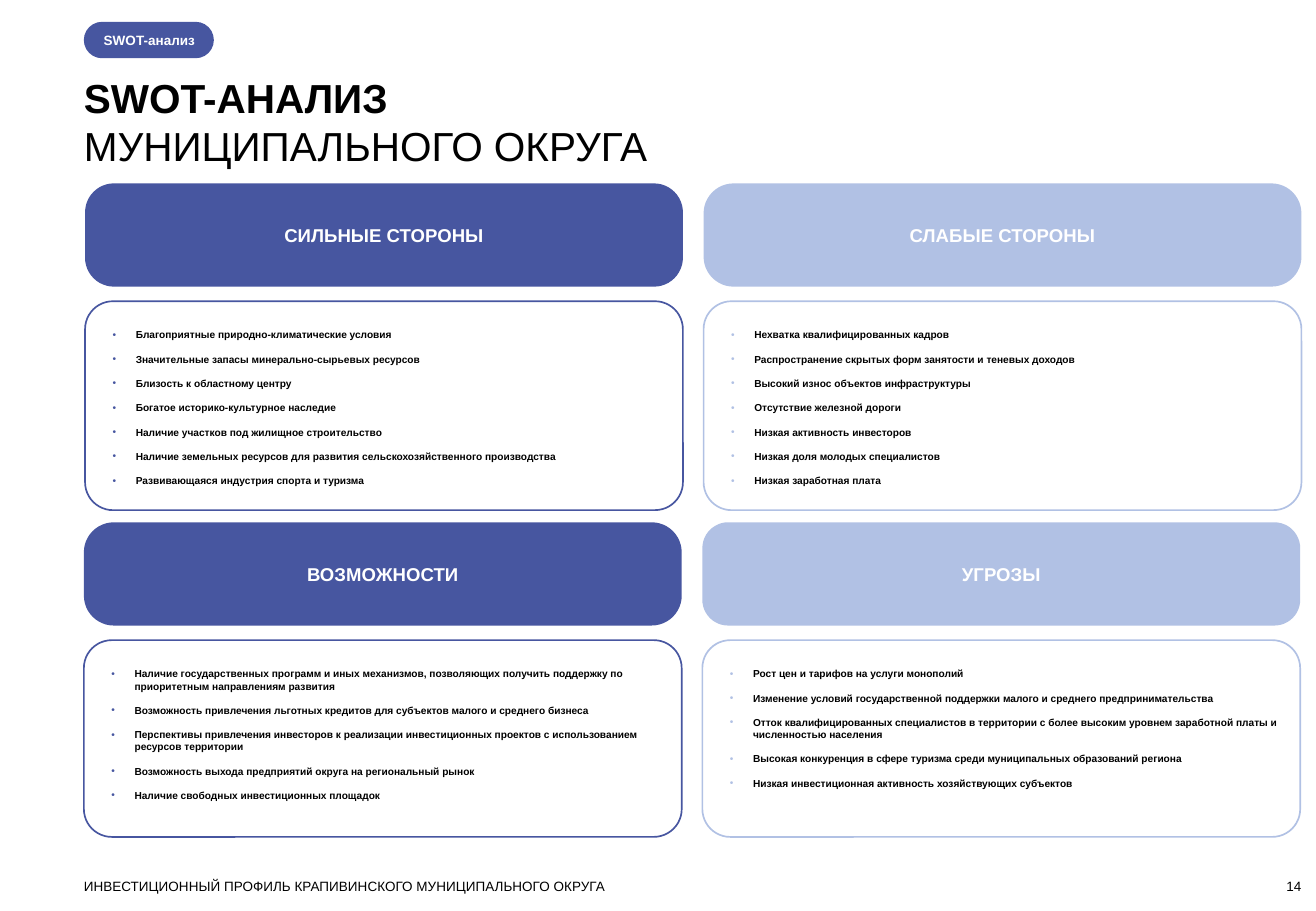
from dataclasses import dataclass

from lxml import etree
from pptx import Presentation
from pptx import util as u
from pptx.dml.color import RGBColor
from pptx.enum import shapes, text
from pptx.oxml.ns import qn
from pptx.shapes.autoshape import Shape
from pptx.text.text import _Paragraph as Paragraph

FONT = "Arial"
DARK, LIGHT, BLACK, WHITE = "4756A0", "B1C1E4", "000000", "FFFFFF"
MARGIN = 0.69
COLUMN_WIDTH, COLUMN_PITCH = 4.92, 5.09
ROW_TOP, ROW_PITCH, ROW_SHIFT = 1.51, 2.79, 0.01
HEADER_HEIGHT, BODY_OFFSET = 0.85, 0.97
BODY_HEIGHTS = (1.72, 1.62)
BODY_RADIUS = 0.23
COLUMN_COLOURS = (DARK, LIGHT)
COLUMN_RIGHT_INSETS = (0.16, 0.1)
INDENT = 0.19


@dataclass(frozen=True)
class Box:
    left: float
    top: float
    width: float
    height: float

    def lengths(self) -> list[int]:
        return [u.Inches(side) for side in (self.left, self.top, self.width, self.height)]


@dataclass(frozen=True)
class Quadrant:
    column: int
    row: int
    title: str
    header_radius: float
    items: tuple[str, ...]


QUADRANTS = (
    Quadrant(0, 0, "СИЛЬНЫЕ СТОРОНЫ", 0.28, (
        "Благоприятные природно-климатические условия",
        "Значительные запасы минерально-сырьевых ресурсов",
        "Близость к областному центру",
        "Богатое историко-культурное наследие",
        "Наличие участков под жилищное строительство",
        "Наличие земельных ресурсов для развития сельскохозяйственного производства",
        "Развивающаяся индустрия спорта и туризма",
    )),
    Quadrant(1, 0, "СЛАБЫЕ СТОРОНЫ", 0.29, (
        "Нехватка квалифицированных кадров",
        "Распространение скрытых форм занятости и теневых доходов",
        "Высокий износ объектов инфраструктуры",
        "Отсутствие железной дороги",
        "Низкая активность инвесторов",
        "Низкая доля молодых специалистов",
        "Низкая заработная плата",
    )),
    Quadrant(0, 1, "ВОЗМОЖНОСТИ", 0.29, (
        "Наличие государственных программ и иных механизмов, позволяющих получить "
        "поддержку по приоритетным направлениям развития",
        "Возможность привлечения льготных кредитов для субъектов малого и среднего бизнеса",
        "Перспективы привлечения инвесторов к реализации инвестиционных проектов "
        "с использованием ресурсов территории",
        "Возможность выхода предприятий округа на региональный рынок",
        "Наличие свободных инвестиционных площадок",
    )),
    Quadrant(1, 1, "УГРОЗЫ", 0.25, (
        "Рост цен и тарифов на услуги монополий",
        "Изменение условий государственной поддержки малого и среднего предпринимательства",
        "Отток квалифицированных специалистов в территории с более высоким уровнем "
        "заработной платы и численностью населения",
        "Высокая конкуренция в сфере туризма среди муниципальных образований региона",
        "Низкая инвестиционная активность хозяйствующих субъектов",
    )),
)


def colour(value: str) -> RGBColor:
    return RGBColor.from_string(value)


def set_insets(shape: Shape, left: float, top: float, right: float, bottom: float) -> None:
    frame = shape.text_frame
    frame.word_wrap = True
    frame.margin_left, frame.margin_top = u.Inches(left), u.Inches(top)
    frame.margin_right, frame.margin_bottom = u.Inches(right), u.Inches(bottom)


def set_font(paragraph: Paragraph, size: float, value: str, bold: bool) -> None:
    font = paragraph.font
    font.name, font.size, font.bold = FONT, u.Pt(size), bold
    font.color.rgb = colour(value)


def write(paragraph: Paragraph, words: str, size: float, value: str, bold: bool = False,
          align: text.PP_ALIGN = text.PP_ALIGN.LEFT) -> None:
    paragraph.text = words
    paragraph.alignment = align
    set_font(paragraph, size, value, bold)


def add_bullet(paragraph: Paragraph, value: str) -> None:
    properties = paragraph._p.get_or_add_pPr()
    properties.set("marL", str(u.Inches(INDENT)))
    properties.set("indent", str(-u.Inches(INDENT)))
    bullet_colour = etree.SubElement(properties, qn("a:buClr"))
    etree.SubElement(bullet_colour, qn("a:srgbClr"), val=value)
    etree.SubElement(properties, qn("a:buFont"), typeface=FONT)
    etree.SubElement(properties, qn("a:buChar"), char="•")


def add_rounded(slide, box: Box, radius: float) -> Shape:
    shape = slide.shapes.add_shape(shapes.MSO_SHAPE.ROUNDED_RECTANGLE, *box.lengths())
    shape.adjustments[0] = radius
    shape.shadow.inherit = False
    return shape


def add_filled(slide, box: Box, radius: float, value: str) -> Shape:
    shape = add_rounded(slide, box, radius)
    shape.fill.solid()
    shape.fill.fore_color.rgb = colour(value)
    shape.line.fill.background()
    shape.text_frame.vertical_anchor = text.MSO_ANCHOR.MIDDLE
    return shape


def add_text(slide, box: Box) -> Shape:
    shape = slide.shapes.add_textbox(*box.lengths())
    set_insets(shape, 0, 0, 0, 0)
    return shape


def add_quadrant(slide, quadrant: Quadrant) -> None:
    value = COLUMN_COLOURS[quadrant.column]
    left = MARGIN + quadrant.column * COLUMN_PITCH + (1 - quadrant.row) * ROW_SHIFT
    top = ROW_TOP + quadrant.row * ROW_PITCH
    height = BODY_HEIGHTS[quadrant.row]

    body = add_rounded(slide, Box(left, top + BODY_OFFSET, COLUMN_WIDTH, height),
                       BODY_RADIUS / height)
    body.fill.background()
    body.line.color.rgb = colour(value)
    body.line.width = u.Pt(1)
    body.text_frame.vertical_anchor = text.MSO_ANCHOR.TOP
    set_insets(body, 0.16, 0.16, COLUMN_RIGHT_INSETS[quadrant.column], 0.05)
    for index, item in enumerate(quadrant.items):
        paragraph = body.text_frame.add_paragraph() if index else body.text_frame.paragraphs[0]
        if index:
            paragraph.space_before = u.Pt(7.2)
        add_bullet(paragraph, value)
        write(paragraph, item, 6, BLACK, bold=True)

    header = add_filled(slide, Box(left, top, COLUMN_WIDTH, HEADER_HEIGHT),
                        quadrant.header_radius, value)
    write(header.text_frame.paragraphs[0], quadrant.title, 11, WHITE, bold=True,
          align=text.PP_ALIGN.CENTER)


def main() -> None:
    presentation = Presentation()
    presentation.slide_width, presentation.slide_height = u.Inches(10.83), u.Inches(7.5)
    slide = presentation.slides.add_slide(presentation.slide_layouts[6])

    for quadrant in QUADRANTS:
        add_quadrant(slide, quadrant)

    title = add_text(slide, Box(MARGIN, 0.6, 10.02, 0.81)).text_frame
    write(title.paragraphs[0], "SWOT-АНАЛИЗ", 24, BLACK, bold=True)
    write(title.add_paragraph(), "МУНИЦИПАЛЬНОГО ОКРУГА", 24, BLACK)

    tag = add_filled(slide, Box(MARGIN, 0.18, 1.07, 0.3), 0.5, DARK)
    set_insets(tag, 0.12, 0, 0, 0)
    write(tag.text_frame.paragraphs[0], "SWOT-анализ", 8, WHITE, bold=True)

    footer = add_text(slide, Box(MARGIN, 7.23, 8, 0.13)).text_frame
    write(footer.paragraphs[0], "ИНВЕСТИЦИОННЫЙ ПРОФИЛЬ КРАПИВИНСКОГО МУНИЦИПАЛЬНОГО ОКРУГА",
          8, BLACK)

    number = add_text(slide, Box(9.91, 7.23, 0.8, 0.13)).text_frame
    number.vertical_anchor = text.MSO_ANCHOR.BOTTOM
    write(number.paragraphs[0], "14", 8, BLACK, align=text.PP_ALIGN.RIGHT)

    presentation.save("out.pptx")


if __name__ == "__main__":
    main()
